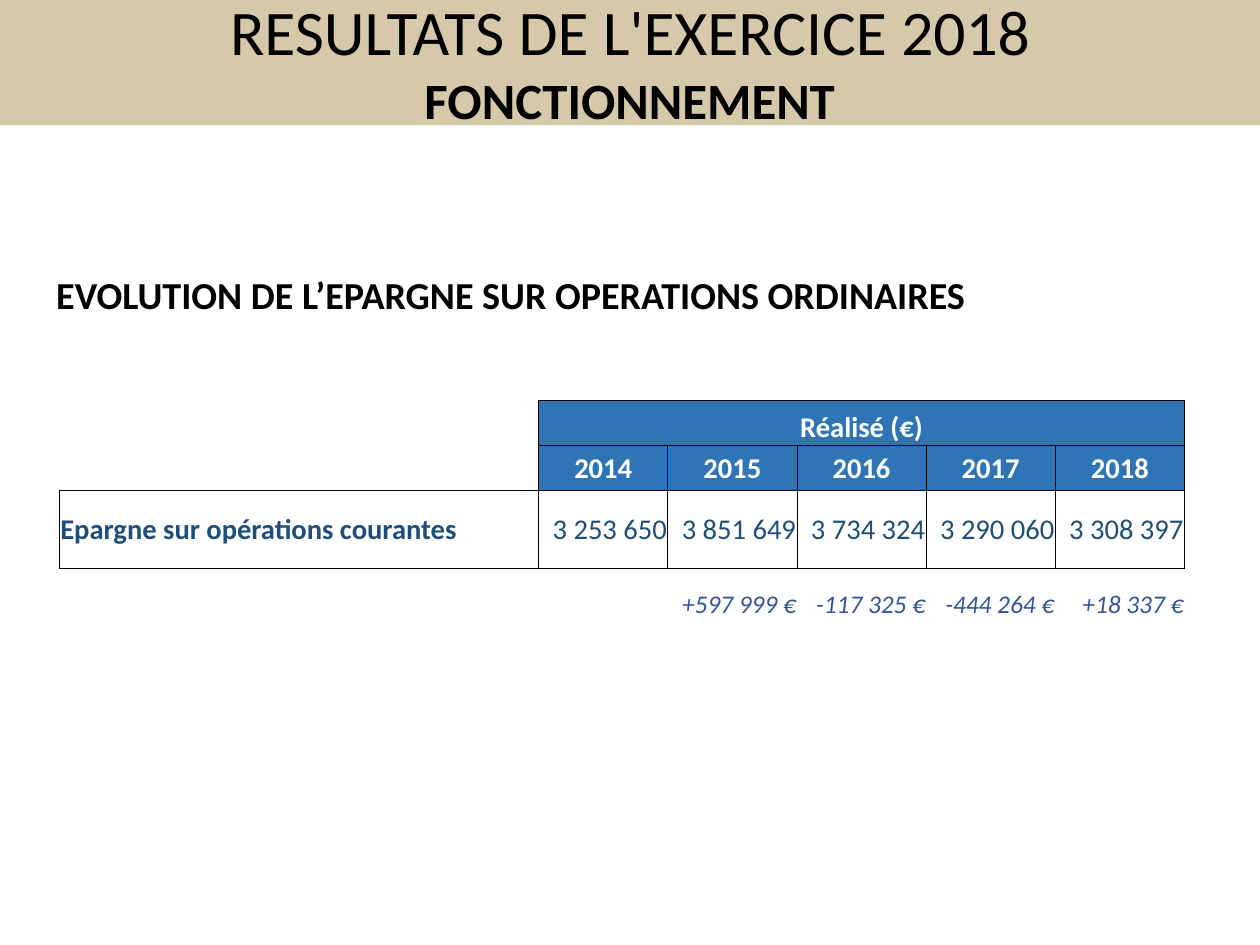
from lxml import etree
from pptx import Presentation
from pptx.dml.color import RGBColor
from pptx.enum.shapes import MSO_SHAPE
from pptx.enum.text import MSO_ANCHOR, PP_ALIGN
from pptx.oxml.ns import qn
from pptx.util import Cm, Pt

LEFT, CENTER, RIGHT = PP_ALIGN.LEFT, PP_ALIGN.CENTER, PP_ALIGN.RIGHT
MIDDLE, BOTTOM = MSO_ANCHOR.MIDDLE, MSO_ANCHOR.BOTTOM
RECT = MSO_SHAPE.RECTANGLE

TITLE = "RESULTATS DE L'EXERCICE 2018"
SUBTITLE = "FONCTIONNEMENT"
HEADING = "EVOLUTION DE L’EPARGNE SUR OPERATIONS ORDINAIRES"
GROUP = "Réalisé (€)"
ROW_LABEL = "Epargne sur opérations courantes"
RESULTS = [
    ("2014", "3 253 650", ""),
    ("2015", "3 851 649", "+597 999 €"),
    ("2016", "3 734 324", "-117 325 €"),
    ("2017", "3 290 060", "-444 264 €"),
    ("2018", "3 308 397", "+18 337 €"),
]

THEME = dict(
    font="Calibri", black="000000", white="FFFFFF", band="D6C8AB",
    header="2F75B5", value="1F4E78", change="305496",
    title=40, subtitle=32, heading=24, body=18, small=16, border=0.5,
)

SLIDE_W, SLIDE_H = 28, 21
LABEL_W, YEAR_W = 10.65, 2.87
ROW_HEIGHTS = [1, 1, 1.73, 1.16]


def add_text(p, text, size, color=THEME["black"], bold=False, italic=False, align=LEFT):
    p.alignment = align
    r = p.add_run()
    r.text = text
    r.font.name = THEME["font"]
    r.font.size = Pt(size)
    r.font.bold = bold
    r.font.italic = italic
    r.font.color.rgb = RGBColor.from_string(color)


def add_box(s, left, top, width, height, anchor):
    tf = s.shapes.add_textbox(Cm(left), Cm(top), Cm(width), Cm(height)).text_frame
    tf.word_wrap = True
    tf.vertical_anchor = anchor
    return tf.paragraphs[0]


def set_borders(cell, sides):
    tc_pr = cell._tc.get_or_add_tcPr()
    for i, side in enumerate("LRTB"):
        ln = etree.Element(qn(f"a:ln{side}"), w=str(Pt(THEME["border"])))
        if side in sides:
            fill = etree.SubElement(ln, qn("a:solidFill"))
            etree.SubElement(fill, qn("a:srgbClr"), val=THEME["black"])
        else:
            etree.SubElement(ln, qn("a:noFill"))
        tc_pr.insert(i, ln)


def fill_cell(cell, text="", sides="LRTB", fill=None, anchor=MIDDLE, **fmt):
    cell.margin_left = cell.margin_right = cell.margin_top = Cm(0.02)
    cell.margin_bottom = 0
    cell.vertical_anchor = anchor
    if fill:
        cell.fill.solid()
        cell.fill.fore_color.rgb = RGBColor.from_string(fill)
    else:
        cell.fill.background()
    set_borders(cell, sides)
    if text:
        add_text(cell.text_frame.paragraphs[0], text, **fmt)


def add_results(s):
    width = LABEL_W + YEAR_W * len(RESULTS)
    table = s.shapes.add_table(
        len(ROW_HEIGHTS), len(RESULTS) + 1,
        Cm(1.32), Cm(8.9), Cm(width), Cm(sum(ROW_HEIGHTS))).table
    table.first_row = table.horz_banding = False
    for i, col in enumerate(table.columns):
        col.width = Cm(YEAR_W if i else LABEL_W)
    for row, height in zip(table.rows, ROW_HEIGHTS):
        row.height = Cm(height)

    header = dict(fill=THEME["header"], size=THEME["body"], color=THEME["white"],
                  bold=True, align=CENTER)
    value = dict(size=THEME["body"], color=THEME["value"])
    change = dict(fill=THEME["white"], sides="T", anchor=BOTTOM, size=THEME["small"],
                  color=THEME["change"], italic=True, align=RIGHT)

    for row, sides in enumerate(["R", "RB", None, "T"]):
        if sides:
            fill_cell(table.cell(row, 0), sides=sides)
    fill_cell(table.cell(2, 0), ROW_LABEL, bold=True, **value)
    table.cell(0, 1).merge(table.cell(0, len(RESULTS)))
    for i, (year, amount, diff) in enumerate(RESULTS, 1):
        fill_cell(table.cell(0, i), GROUP if i == 1 else "", anchor=BOTTOM, **header)
        fill_cell(table.cell(1, i), year, **header)
        fill_cell(table.cell(2, i), amount, align=RIGHT, **value)
        fill_cell(table.cell(3, i), diff, **change)


def main():
    prs = Presentation()
    prs.slide_width, prs.slide_height = Cm(SLIDE_W), Cm(SLIDE_H)
    s = prs.slides.add_slide(prs.slide_layouts[6])

    band = s.shapes.add_shape(RECT, 0, 0, Cm(SLIDE_W), Cm(2.78))
    band.shadow.inherit = False
    band.fill.solid()
    band.fill.fore_color.rgb = RGBColor.from_string(THEME["band"])
    band.line.fill.background()

    p = add_box(s, 1.4, 0, 25.2, 2.7, MIDDLE)
    add_text(p, TITLE, THEME["title"], align=CENTER)
    p.add_line_break()
    add_text(p, SUBTITLE, THEME["subtitle"], bold=True, align=CENTER)

    add_results(s)

    p = add_box(s, 1, 5.9, 24, 1.28, MSO_ANCHOR.TOP)
    add_text(p, HEADING, THEME["heading"], bold=True)

    prs.save("out.pptx")


if __name__ == "__main__":
    main()
